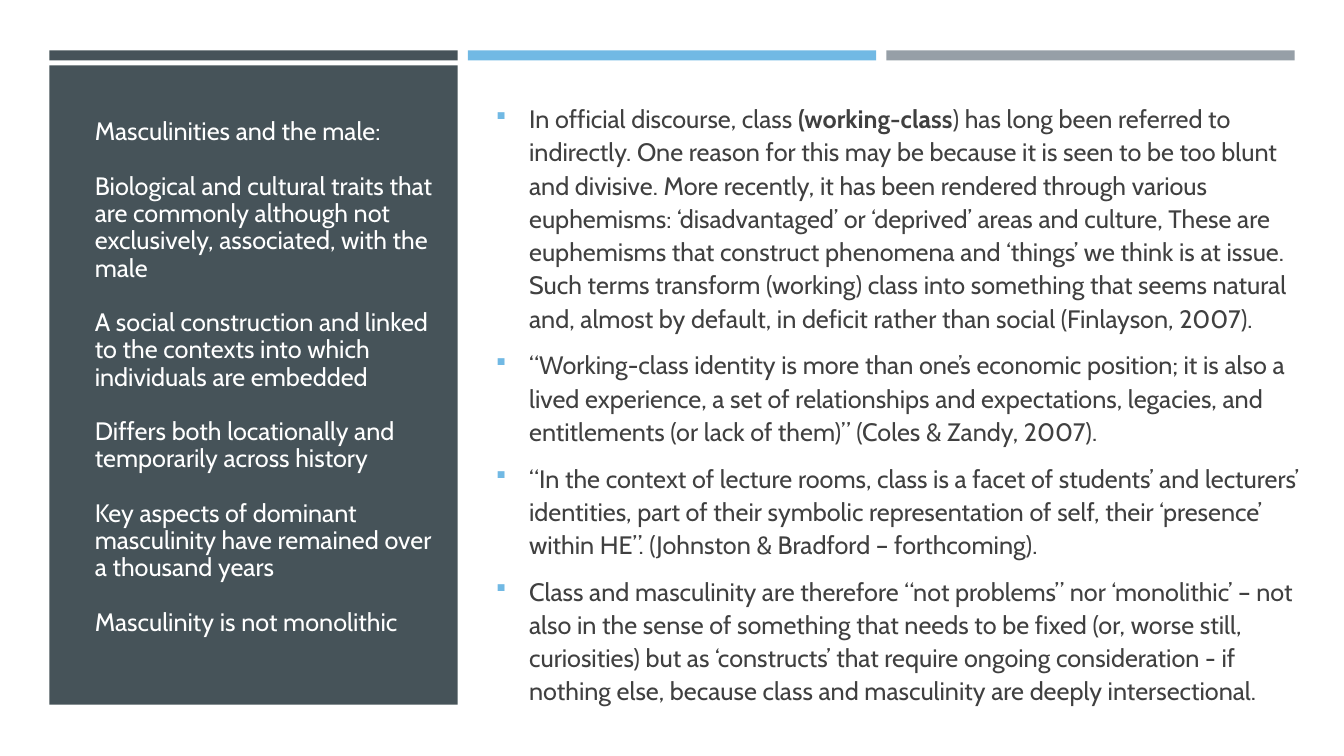
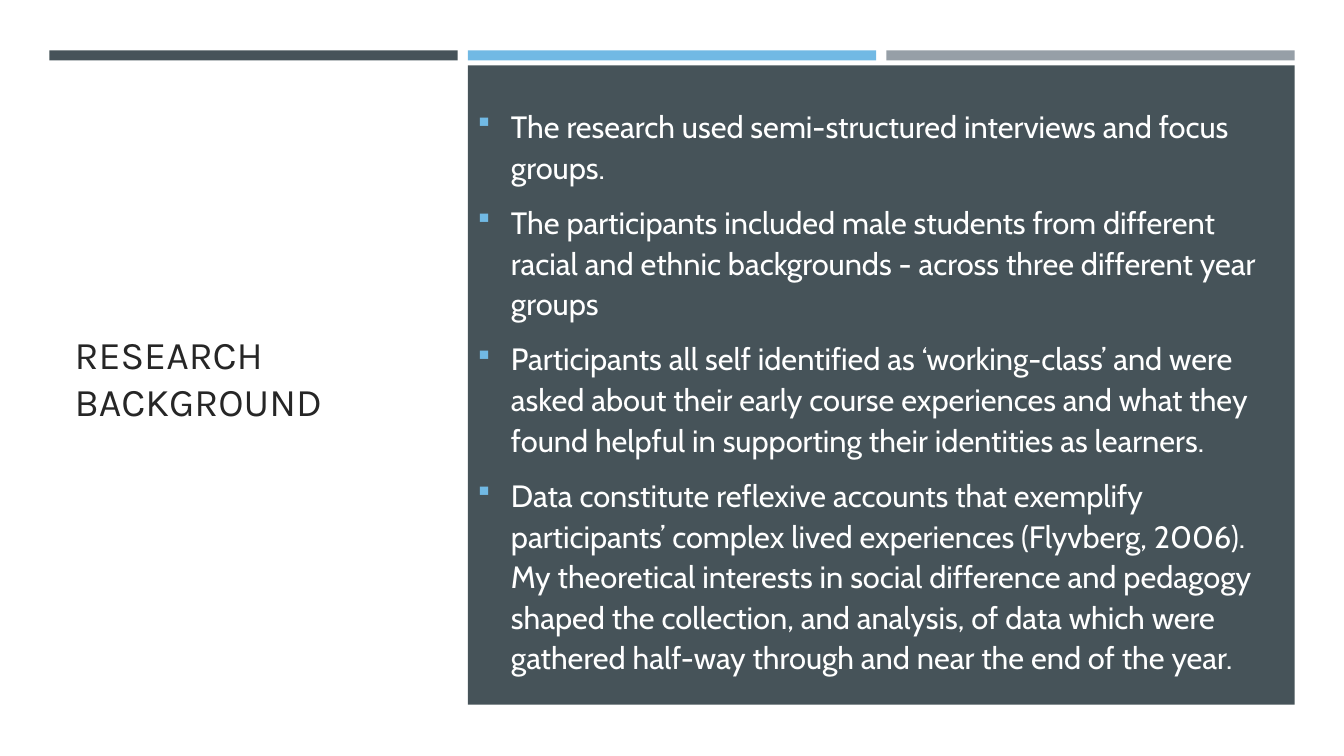
from lxml import etree
from pptx import Presentation
from pptx.dml.color import RGBColor
from pptx.enum.shapes import MSO_SHAPE
from pptx.enum.text import MSO_ANCHOR, MSO_AUTO_SIZE, PP_ALIGN
from pptx.oxml.ns import qn
from pptx.util import Inches, Pt

RECTANGLE = MSO_SHAPE.RECTANGLE
MIDDLE = MSO_ANCHOR.MIDDLE
NO_AUTOFIT = MSO_AUTO_SIZE.NONE
LEFT = PP_ALIGN.LEFT

COLOURS = {
    "slate": "465359",
    "sky": "71B9E4",
    "grey": "969FA7",
    "white": "FFFFFF",
    "body": "404040",
    "heading": "262626",
}
FRAME = {"word_wrap": True, "auto_size": NO_AUTOFIT, "vertical_anchor": MIDDLE}

MARGIN, BAND_TOP, BAND_WIDTH, BAND_HEIGHT, BAND_PITCH = 0.49, 0.5, 4.05, 0.1, 4.15
PANEL_TOP, PANEL_HEIGHT = 0.65, 6.34
SECOND_COLUMN = MARGIN + BAND_PITCH
WIDE_PANEL = BAND_PITCH + BAND_WIDTH
BULLET_INDENT = 0.33

MASCULINITIES = [
    "Masculinities and the male:",
    "Biological and cultural traits that are commonly although not exclusively, associated, with the male",
    "A social construction and linked to the contexts into which individuals are embedded",
    "Differs both locationally and temporarily across history",
    "Key aspects of dominant masculinity have remained over a thousand years",
    "Masculinity is not monolithic",
]
CLASS_DISCOURSE = [
    [
        ("In official discourse, class ", False),
        ("(working-class", True),
        (") has long been referred to indirectly. One reason for this may be because it is seen "
         "to be too blunt and divisive. More recently, it has been rendered through various "
         "euphemisms: ‘disadvantaged’ or ‘deprived’ areas and culture, These are euphemisms that "
         "construct phenomena and ‘things’ we think is at issue. Such terms transform (working) "
         "class into something that seems natural and, almost by default, in deficit rather than "
         "social (Finlayson, 2007).", False),
    ],
    "“Working-class identity is more than one’s economic position; it is also a lived experience, "
    "a set of relationships and expectations, legacies, and entitlements (or lack of them)” "
    "(Coles & Zandy, 2007).",
    "“In the context of lecture rooms, class is a facet of students’ and lecturers’ identities, "
    "part of their symbolic representation of self, their ‘presence’ within HE”. "
    "(Johnston & Bradford – forthcoming).",
    "Class and masculinity are therefore “not problems” nor ‘monolithic’ – not also in the sense "
    "of something that needs to be fixed (or, worse still, curiosities) but as ‘constructs’ that "
    "require ongoing consideration - if nothing else, because class and masculinity are deeply "
    "intersectional.",
]
RESEARCH = [
    "The research used semi-structured interviews and focus groups.",
    "The participants included male students from different racial and ethnic backgrounds - "
    "across three different year groups",
    "Participants all self identified as ‘working-class’ and were asked about their early course "
    "experiences and what they found helpful in supporting their identities as learners.",
    "Data constitute reflexive accounts that exemplify participants’ complex lived experiences "
    "(Flyvberg, 2006). My theoretical interests in social difference and pedagogy shaped the "
    "collection, and analysis, of data which were gathered half-way through and near the end of "
    "the year.",
]


def apply_format(target, values):
    """Set every attribute named in values on the target."""
    for name, value in values.items():
        setattr(target, name, value)


def add_block(slide, left, top, width, height, colour):
    """Draw a plain filled rectangle."""
    block = slide.shapes.add_shape(
        RECTANGLE, Inches(left), Inches(top), Inches(width), Inches(height))
    block.shadow.inherit = False
    block.fill.solid()
    block.fill.fore_color.rgb = RGBColor.from_string(COLOURS[colour])
    block.line.fill.background()


def add_bullet(paragraph):
    """Give a paragraph a hanging square bullet."""
    properties = paragraph._p.get_or_add_pPr()
    properties.set("marL", str(Inches(BULLET_INDENT)))
    properties.set("indent", str(-Inches(BULLET_INDENT)))
    colour = etree.SubElement(properties, qn("a:buClr"))
    etree.SubElement(colour, qn("a:srgbClr"), val=COLOURS["sky"])
    etree.SubElement(properties, qn("a:buSzPct"), val="92000")
    etree.SubElement(properties, qn("a:buFont"), typeface="Wingdings")
    etree.SubElement(properties, qn("a:buChar"), char="§")


def write_text(frame, paragraphs, font, size, colour, spacing=1.0, gap=0, bullets=False):
    """Fill a text frame, with the gap in points between its paragraphs."""
    apply_format(frame, FRAME)
    for index, content in enumerate(paragraphs):
        paragraph = frame.add_paragraph() if index else frame.paragraphs[0]
        apply_format(paragraph, {
            "alignment": LEFT,
            "line_spacing": spacing,
            "space_before": Pt(gap if index else 0),
            "space_after": Pt(0),
        })
        if bullets:
            add_bullet(paragraph)
        parts = [(content, False)] if isinstance(content, str) else content
        for text, bold in parts:
            run = paragraph.add_run()
            run.text = text
            apply_format(run.font, {"name": font, "size": Pt(size), "bold": bold})
            run.font.color.rgb = RGBColor.from_string(COLOURS[colour])


def place_title(slide, left, top, width, height, paragraphs, **style):
    """Move the title in front of the panel and write it."""
    title = slide.shapes.title
    apply_format(title, {
        "left": Inches(left), "top": Inches(top),
        "width": Inches(width), "height": Inches(height),
    })
    title.element.getparent().append(title.element)
    write_text(title.text_frame, paragraphs, **style)


def add_bullets(slide, left, top, width, height, paragraphs, **style):
    """Add a bulleted body text."""
    body = slide.shapes.add_textbox(
        Inches(left), Inches(top), Inches(width), Inches(height))
    write_text(body.text_frame, paragraphs, font="Cabin", spacing=1.1, bullets=True, **style)


def add_banded_slide(deck, panel_left, panel_width):
    """Add a title-only slide with three bands and a slate panel."""
    slide = deck.slides.add_slide(deck.slide_layouts[5])
    for column, colour in enumerate(("slate", "sky", "grey")):
        add_block(slide, MARGIN + column * BAND_PITCH, BAND_TOP, BAND_WIDTH, BAND_HEIGHT, colour)
    add_block(slide, panel_left, PANEL_TOP, panel_width, PANEL_HEIGHT, "slate")
    return slide


def build_masculinities(deck):
    """Build the slide on masculinity and class."""
    slide = add_banded_slide(deck, MARGIN, BAND_WIDTH)
    place_title(slide, 0.84, 0.65, 3.56, 6.2, MASCULINITIES,
                font="Cabin", size=18, colour="white", spacing=0.9, gap=19.5)
    add_bullets(slide, 4.82, 0.8, 8.23, 6.4, CLASS_DISCOURSE, size=18, colour="body", gap=9.6)


def build_research(deck):
    """Build the slide on the research background."""
    slide = add_banded_slide(deck, SECOND_COLUMN, WIDE_PANEL)
    place_title(slide, 0.64, 1.17, 3.52, 5.15, ["RESEARCH BACKGROUND"],
                font="Karla", size=28, colour="heading")
    add_bullets(slide, SECOND_COLUMN, 0.89, 8.06, 5.96, RESEARCH,
                size=22, colour="white", gap=10.4)


def main():
    """Build and save the presentation."""
    deck = Presentation()
    deck.slide_width, deck.slide_height = Inches(13.33), Inches(7.5)
    build_masculinities(deck)
    build_research(deck)
    deck.save("out.pptx")


if __name__ == "__main__":
    main()
